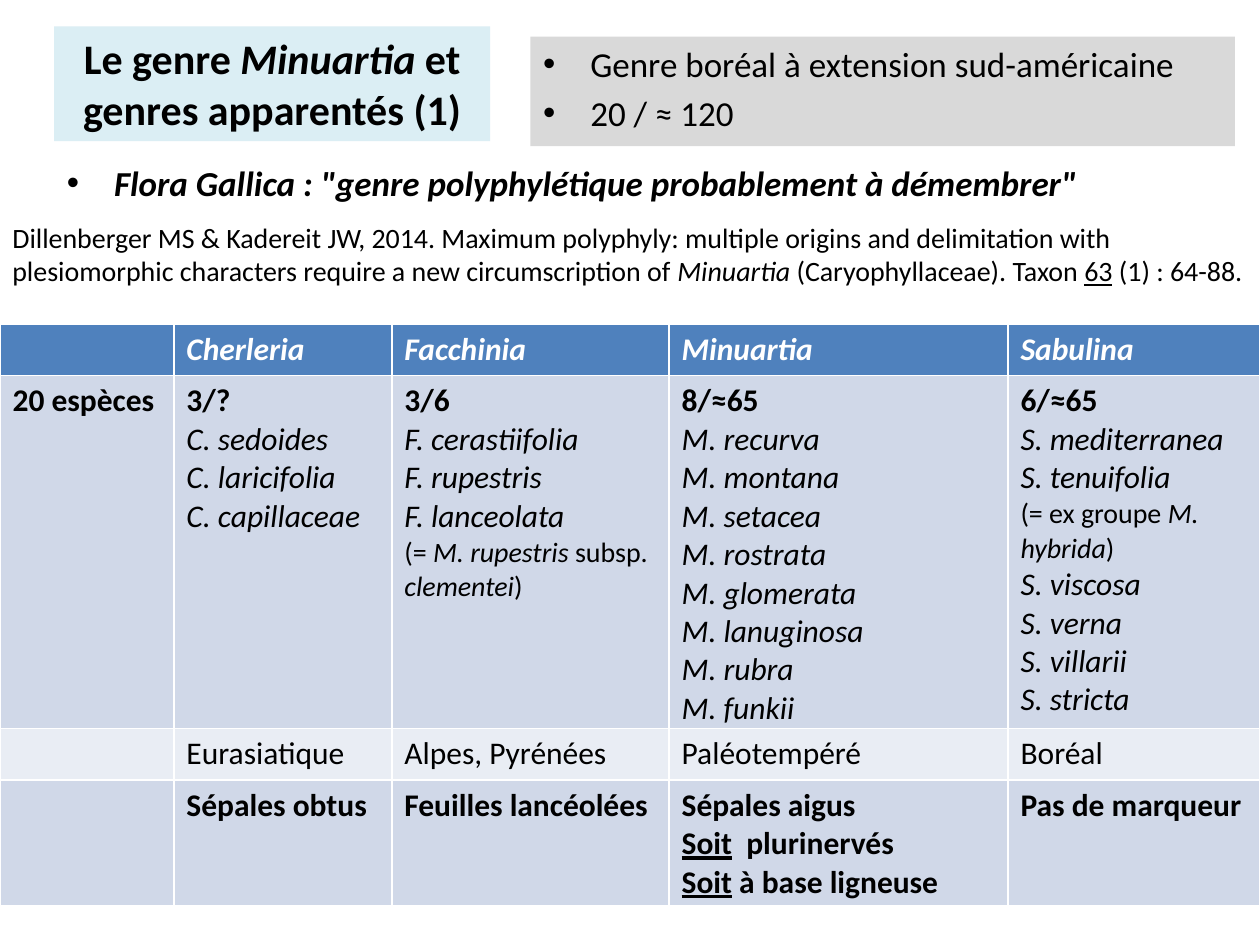
"""Build the slide on the genus Minuartia and its relatives."""
from dataclasses import dataclass, field
from typing import NamedTuple

from pptx import Presentation as Deck
from pptx.dml.color import RGBColor as Color
from pptx.enum.text import MSO_AUTO_SIZE as Fit, MSO_ANCHOR as Anchor, PP_ALIGN as Align
from pptx.util import Inches, Pt


@dataclass(frozen=True)
class Theme:
    """Colours, type sizes and face of the slide."""
    face: str = "Calibri"
    ink: str = "000000"
    white: str = "FFFFFF"
    sky: str = "DBEEF4"
    grey: str = "D9D9D9"
    head: str = "4F81BD"
    dark: str = "D0D8E8"
    pale: str = "E9EDF4"
    title: int = 24
    list: int = 20
    cell: int = 18
    note: int = 16


class Box(NamedTuple):
    """A place on the grid, in columns and rows."""
    x: float
    y: float
    w: float
    h: float


@dataclass
class Run:
    """A stretch of text with its own format values."""
    text: str
    form: dict = field(default_factory=dict)


Para = list[Run]
LOOK = Theme()
WIDE, HIGH = Inches(10), Inches(7.5)
COLS, ROWS = 100, 75
BOLD, SLANT, LINE = {"bold": True}, {"italic": True}, {"underline": True}
NOTE = {"size": Pt(LOOK.note)}


def across(n: float) -> int:
    """Turn grid columns into a length."""
    return round(WIDE * n / COLS)


def down(n: float) -> int:
    """Turn grid rows into a length."""
    return round(HIGH * n / ROWS)


def place(box: Box) -> tuple[int, int, int, int]:
    """Turn a box into left, top, width and height."""
    return across(box.x), down(box.y), across(box.w), down(box.h)


def write(frame, paras: list[Para], size: int, ink: str = LOOK.ink, **base) -> None:
    """Fill a text frame with formatted paragraphs."""
    for i, runs in enumerate(paras):
        para = frame.paragraphs[0] if i == 0 else frame.add_paragraph()
        for run in runs:
            part = para.add_run()
            part.text = run.text
            form = {"name": LOOK.face, "size": Pt(size), "bold": False, "italic": False}
            for key, val in (form | base | run.form).items():
                setattr(part.font, key, val)
            part.font.color.rgb = Color.from_string(ink)


def paint(item, tint: str) -> None:
    """Give a shape or cell a solid fill."""
    item.fill.solid()
    item.fill.fore_color.rgb = Color.from_string(tint)


def settle(shape, box: Box, tint: str = "") -> None:
    """Move a placeholder to its box and fix its text size."""
    for key, val in zip(("left", "top", "width", "height"), place(box)):
        setattr(shape, key, val)
    shape.text_frame.auto_size = Fit.NONE
    if tint:
        paint(shape, tint)


def plain(*lines: str) -> list[Para]:
    """Make one plain paragraph of each line."""
    return [[Run(line)] for line in lines]


def strong(*lines: str) -> list[Para]:
    """Make one bold paragraph of each line."""
    return [[Run(line, BOLD)] for line in lines]


def taxa(mark: str, names: str) -> list[Para]:
    """List species in italics after the initial of their genus."""
    return [[Run(f"{mark}. {name}", SLANT)] for name in names.split()]


def aside(*parts: str) -> Para:
    """Make a small remark in which every second part is in italics."""
    return [Run(part, NOTE | {"italic": i % 2 == 1}) for i, part in enumerate(parts)]


def either(rest: str) -> list[Para]:
    """Make a bold line that opens with an underlined word."""
    return [[Run("Soit", BOLD | LINE), Run(rest, BOLD)]]


WIDTHS = (13.8, 17.3, 22, 26.9, 20)
HEIGHTS = (4.1, 27.9, 4.1, 10)
TINTS = (LOOK.head, LOOK.dark, LOOK.pale, LOOK.dark)
GRID = [
    [[], *([para] for para in plain("Cherleria", "Facchinia", "Minuartia", "Sabulina"))],
    [
        strong("20 espèces"),
        strong("3/?") + taxa("C", "sedoides laricifolia capillaceae"),
        strong("3/6") + taxa("F", "cerastiifolia rupestris lanceolata")
        + [aside("(= ", "M. rupestris ", "subsp. ", "clementei", ")")],
        strong("8/≈65")
        + taxa("M", "recurva montana setacea rostrata glomerata lanuginosa rubra funkii"),
        strong("6/≈65") + taxa("S", "mediterranea tenuifolia")
        + [aside("(= ex groupe ", "M. hybrida", ")")]
        + taxa("S", "viscosa verna villarii stricta"),
    ],
    [[], *([para] for para in plain("Eurasiatique", "Alpes, Pyrénées", "Paléotempéré", "Boréal"))],
    [
        [],
        strong("Sépales obtus"),
        strong("Feuilles lancéolées"),
        strong("Sépales aigus") + either("  plurinervés") + either(" à base ligneuse"),
        strong("Pas de marqueur"),
    ],
]


def tabulate(slide, box: Box) -> None:
    """Draw the table of the four genera."""
    table = slide.shapes.add_table(len(HEIGHTS), len(WIDTHS), *place(box)).table
    for col, wide in zip(table.columns, WIDTHS):
        col.width = across(wide)
    for r, (row, tall, tint, texts) in enumerate(zip(table.rows, HEIGHTS, TINTS, GRID)):
        row.height = down(tall)
        ink, base = (LOOK.white, BOLD | SLANT) if r == 0 else (LOOK.ink, {})
        for cell, paras in zip(row.cells, texts):
            paint(cell, tint)
            write(cell.text_frame, paras, LOOK.cell, ink, **base)


def main() -> None:
    """Build and save the slide."""
    deck = Deck()
    deck.slide_width, deck.slide_height = WIDE, HIGH
    slide = deck.slides.add_slide(deck.slide_layouts[3])
    title, facts, quote = slide.placeholders

    settle(facts, Box(42.1, 2.9, 55.9, 8.7), LOOK.grey)
    write(facts.text_frame, plain("Genre boréal à extension sud-américaine", "20 / ≈ 120"),
          LOOK.list)

    settle(title, Box(4.3, 2.1, 34.6, 9.1), LOOK.sky)
    title.text_frame.vertical_anchor = Anchor.TOP
    write(title.text_frame,
          [[Run("Le genre "), Run("Minuartia", SLANT), Run(" et genres apparentés (1)")]],
          LOOK.title, **BOLD)
    title.text_frame.paragraphs[0].alignment = Align.CENTER

    settle(quote, Box(4.3, 12.3, 89.8, 5.5))
    write(quote.text_frame,
          plain('Flora Gallica : "genre polyphylétique probablement à démembrer"'),
          LOOK.list, **BOLD, **SLANT)

    source = slide.shapes.add_textbox(*place(Box(0, 17, 100, 6.4))).text_frame
    source.word_wrap = True
    write(source, [[
        Run("Dillenberger MS & Kadereit JW, 2014. Maximum polyphyly: multiple origins and "
            "delimitation with plesiomorphic characters require a new circumscription of "),
        Run("Minuartia", SLANT), Run(" (Caryophyllaceae). Taxon "),
        Run("63", LINE), Run(" (1) : 64-88."),
    ]], LOOK.note)

    tabulate(slide, Box(0, 25.7, 100, sum(HEIGHTS)))
    deck.save("out.pptx")


if __name__ == "__main__":
    main()
